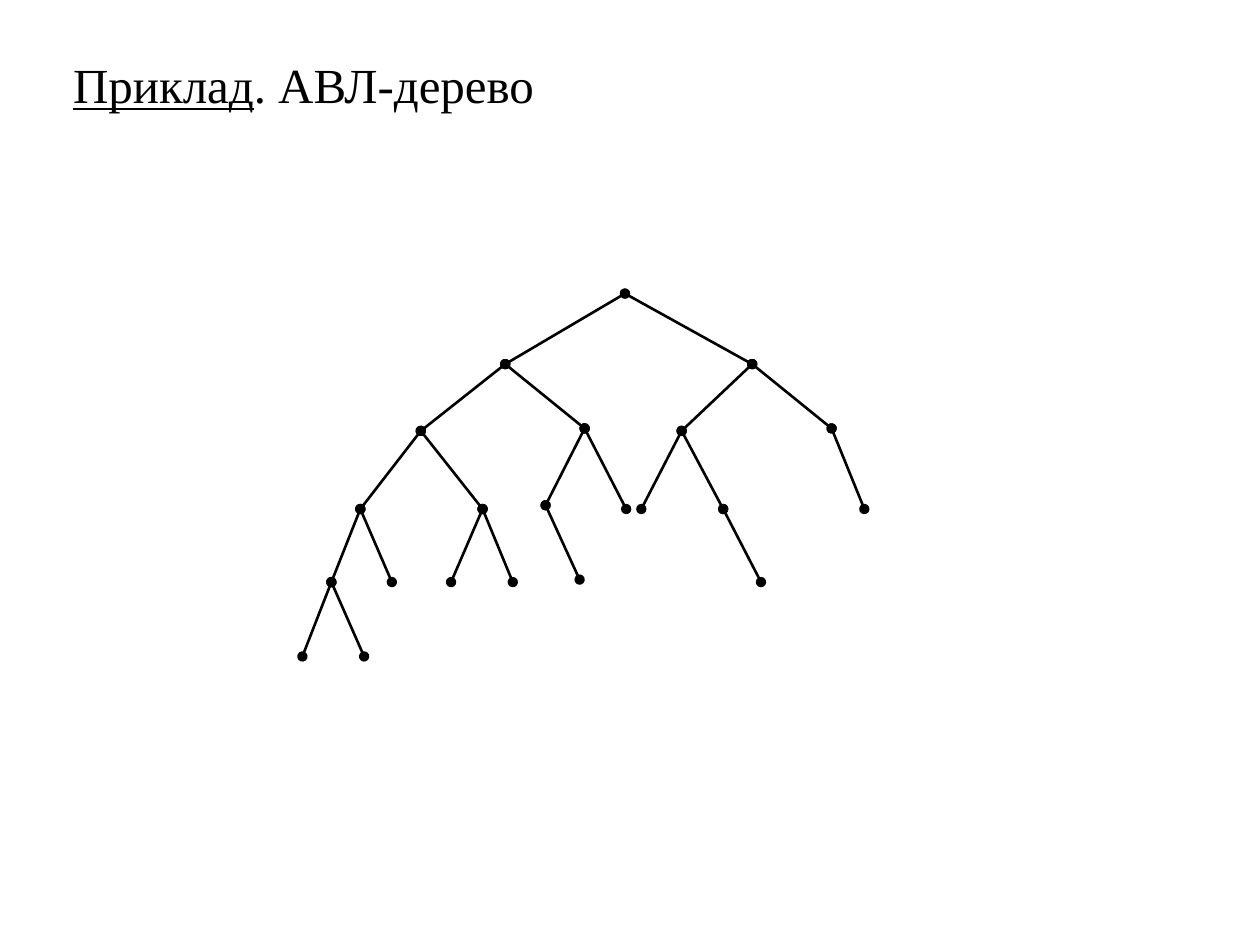
import pptx
import pptx.util
import pptx.dml.color
import pptx.enum.shapes
from lxml import etree

# Content: each node is named by its path of left/right turns from the root ""
TITLE = [("\t", 32, False), ("Приклад", 28, True), (". АВЛ-дерево", 28, False)]
LEVEL_Y = [2.33, 2.89, 3.42, 4.04, 4.62, 5.21]
NODE_X = {
    "": 4.96,
    "L": 4.01, "R": 5.97,
    "LL": 3.34, "LR": 4.64, "RL": 5.41, "RR": 6.6,
    "LLL": 2.86, "LLR": 3.83, "LRL": 4.33, "LRR": 4.97,
    "RLL": 5.09, "RLR": 5.74, "RRR": 6.86,
    "LLLL": 2.63, "LLLR": 3.11, "LLRL": 3.58, "LLRR": 4.07,
    "LRLR": 4.6, "RLRR": 6.04,
    "LLLLL": 2.4, "LLLLR": 2.89,
}
RAISED = {"LR": 0.02, "RR": 0.02, "LRL": 0.03, "LRLR": 0.02}
THEME = {"ink": pptx.dml.color.RGBColor(0, 0, 0), "font": "Times New Roman", "edge": 1.5}

inch = pptx.util.Inches
deck = pptx.Presentation()
deck.slide_width, deck.slide_height = inch(10), inch(7.5)
slide = deck.slides.add_slide(deck.slide_layouts[6])


def add_xml(parent, tag, **attributes):
    return etree.SubElement(parent, pptx.oxml.ns.qn(tag), attributes)


# Title with a hanging indent
title = slide.shapes.add_textbox(0, inch(0.39), inch(10), inch(0.68)).text_frame
frame_format = {"word_wrap": True, "margin_left": inch(0.2), "margin_right": inch(0.2),
                "margin_top": inch(0.05), "margin_bottom": inch(0.05)}
for name, value in frame_format.items():
    setattr(title, name, value)
heading = title.paragraphs[0]
heading.line_spacing = 0.9
indents = heading._p.get_or_add_pPr()
indents.set("marL", str(inch(0.38)))
indents.set("indent", str(-inch(0.38)))
add_xml(add_xml(indents, "a:spcBef"), "a:spcPct", val="20000")
for words, size, underline in TITLE:
    run = heading.add_run()
    run.text = words
    run_format = {"name": THEME["font"], "size": pptx.util.Pt(size), "underline": underline}
    for name, value in run_format.items():
        setattr(run.font, name, value)
    run.font.color.rgb = THEME["ink"]


# Tree: one edge from each node to its parent, with round ends as nodes
def position(node):
    return inch(NODE_X[node]), inch(LEVEL_Y[len(node)] - RAISED.get(node, 0))


tree = slide.shapes.add_group_shape()
for node in NODE_X:
    if not node:
        continue
    edge = tree.shapes.add_connector(
        pptx.enum.shapes.MSO_CONNECTOR.STRAIGHT, *position(node[:-1]), *position(node))
    edge.line.color.rgb = THEME["ink"]
    edge.line.width = pptx.util.Pt(THEME["edge"])
    outline = edge.line._get_or_add_ln()
    for end in ("a:headEnd", "a:tailEnd"):
        add_xml(outline, end, type="oval")
    add_xml(edge._element.spPr, "a:effectLst")

deck.save("out.pptx")
